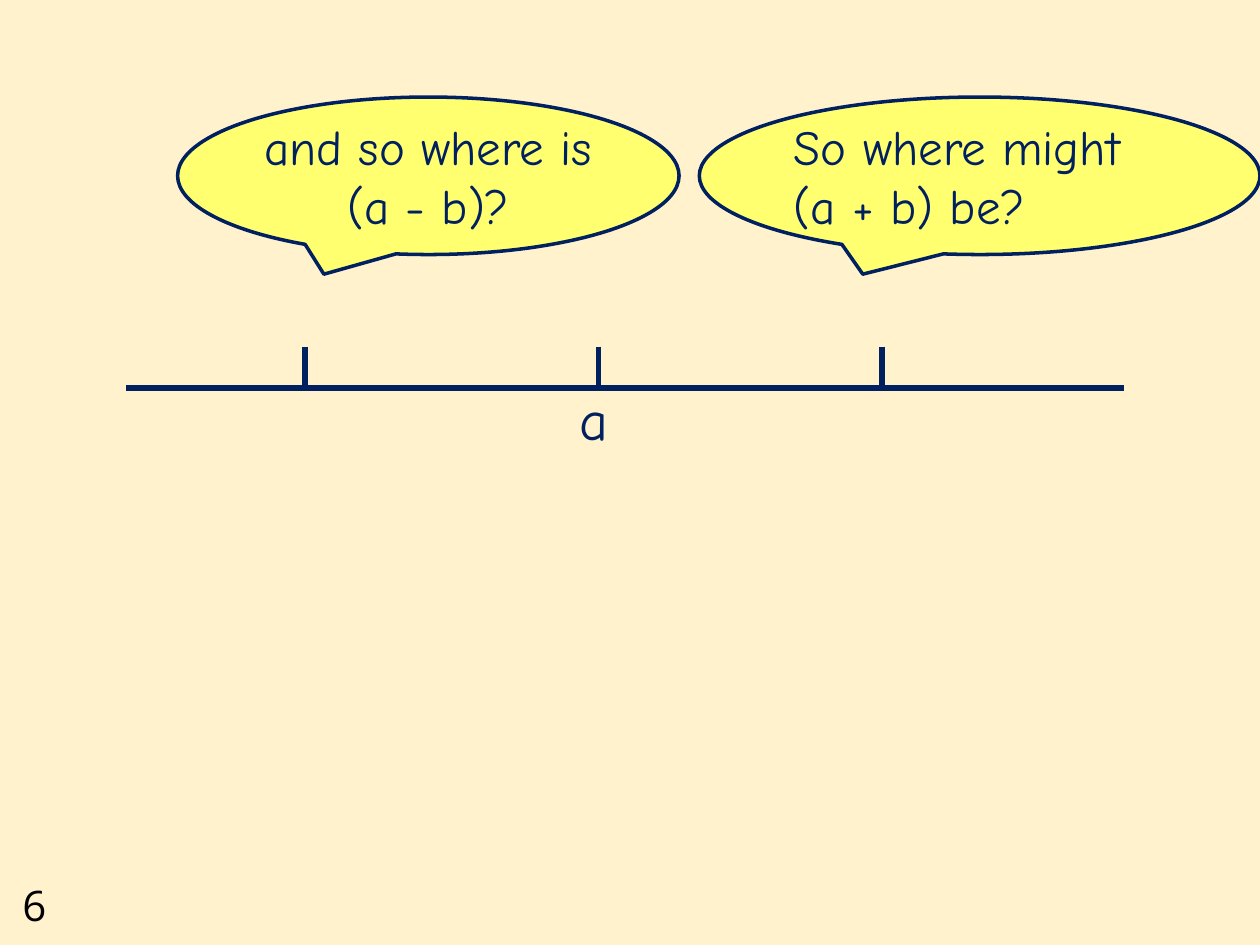
"""Build a number-line slide with two speech bubbles."""
import pptx
import pptx.dml.color
import pptx.enum.shapes
import pptx.enum.text
import pptx.oxml.ns
import pptx.util
from lxml import etree

Inches = pptx.util.Inches
Pt = pptx.util.Pt
ALIGN = pptx.enum.text.PP_ALIGN
NAVY = "002060"


def tint(code):
    return pptx.dml.color.RGBColor.from_string(code)


def write(shape, text, size, font="Comic Neue", color=NAVY, align=ALIGN.LEFT,
          anchor=pptx.enum.text.MSO_ANCHOR.TOP):
    frame = shape.text_frame
    frame.word_wrap = True
    frame.vertical_anchor = anchor
    para = frame.paragraphs[0]
    para.alignment = align
    run = para.add_run()
    run.text = text
    run.font.size = Pt(size)
    run.font.name = font
    run.font.color.rgb = tint(color)


def label(slide, box, text, size, **form):
    shape = slide.shapes.add_textbox(*map(Inches, box))
    write(shape, text, size, **form)


def bubble(slide, left, width, text, align):
    kind = pptx.enum.shapes.MSO_SHAPE.OVAL_CALLOUT
    shape = slide.shapes.add_shape(
        kind, Inches(left), Inches(0.77), Inches(width), Inches(1.25))
    shape.shadow.inherit = False
    shape.fill.solid()
    shape.fill.fore_color.rgb = tint("FFFF70")
    shape.line.color.rgb = tint(NAVY)
    shape.line.width = Pt(2)
    write(shape, text, 28, align=align,
          anchor=pptx.enum.text.MSO_ANCHOR.MIDDLE)


def line(slide, *ends):
    kind = pptx.enum.shapes.MSO_CONNECTOR.STRAIGHT
    link = slide.shapes.add_connector(kind, *map(Inches, ends))
    link.line.color.rgb = tint(NAVY)
    link.line.width = Pt(3)
    etree.SubElement(link._element.spPr, pptx.oxml.ns.qn("a:effectLst"))


def main():
    deck = pptx.Presentation()
    deck.slide_width, deck.slide_height = Inches(10), Inches(7.5)
    slide = deck.slides.add_slide(deck.slide_layouts[6])
    back = slide.background.fill
    back.solid()
    back.fore_color.rgb = tint("FFF2CC")

    label(slide, (0.08, 6.93, 0.75, 0.5), "6", 24,
          font="Open Sans", color="000000")
    axis = 3.08
    line(slide, 1, axis, 8.92, axis)
    for spot in (2.42, 4.75, 7):
        line(slide, spot, 2.75, spot, axis)
    label(slide, (4.5, 3, 0.75, 0.64), "a", 32)
    bubble(slide, 5.55, 4.45, "So where might (a + b) be?", ALIGN.LEFT)
    bubble(slide, 1.41, 3.98, "and so where is (a - b)?", ALIGN.CENTER)
    deck.save("out.pptx")


if __name__ == "__main__":
    main()
